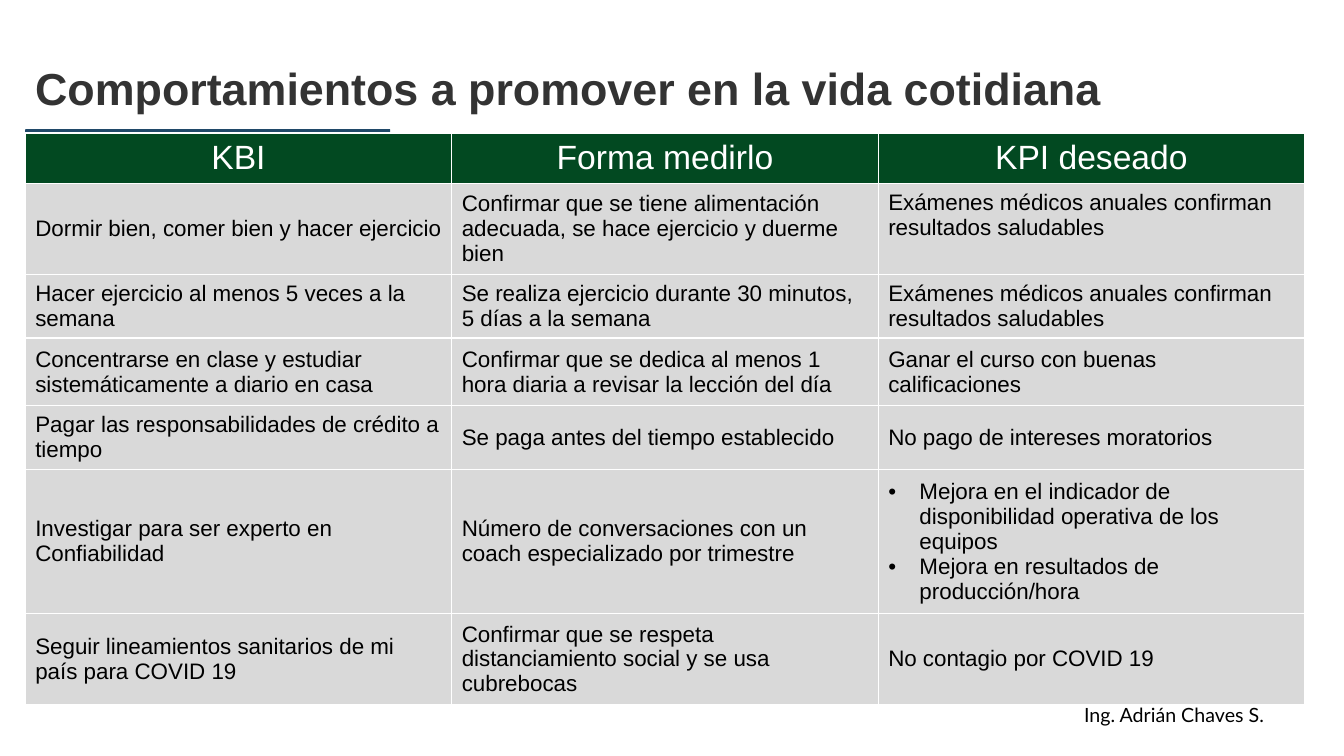
from lxml import etree
from pptx import Presentation
from pptx.dml.color import RGBColor
from pptx.enum.shapes import MSO_SHAPE
from pptx.enum.text import MSO_ANCHOR, PP_ALIGN
from pptx.oxml.ns import qn
from pptx.util import Inches, Pt

TITLE = "Comportamientos a promover en la vida cotidiana"
AUTHOR = "Ing. Adrián Chaves S."
HEADINGS = ["KBI", "Forma medirlo", "KPI deseado"]
# Row height in inches, then the three cells; a list makes a bulleted cell.
BEHAVIOURS = [
    (0.88, "Dormir bien, comer bien y hacer ejercicio",
     "Confirmar que se tiene alimentación adecuada, se hace ejercicio y duerme bien",
     "Exámenes médicos anuales confirman resultados saludables"),
    (0.62, "Hacer ejercicio al menos 5 veces a la semana",
     "Se realiza ejercicio durante 30 minutos, 5 días a la semana",
     "Exámenes médicos anuales confirman resultados saludables"),
    (0.67, "Concentrarse en clase y estudiar sistemáticamente a diario en casa",
     "Confirmar que se dedica al menos 1 hora diaria a revisar la lección del día",
     "Ganar el curso con buenas calificaciones"),
    (0.62, "Pagar las responsabilidades de crédito a tiempo",
     "Se paga antes del tiempo establecido",
     "No pago de intereses moratorios"),
    (1.41, "Investigar para ser experto en Confiabilidad",
     "Número de conversaciones con un coach especializado por trimestre",
     ["Mejora en el indicador de disponibilidad operativa de los equipos",
      "Mejora en resultados de producción/hora"]),
    (0.88, "Seguir lineamientos sanitarios de mi país para COVID 19",
     "Confirmar que se respeta distanciamiento social y se usa cubrebocas",
     "No contagio por COVID 19"),
]
HEADER_HEIGHT = 0.49
COLUMN_WIDTH = 4.23
LEFT = 0.25

WHITE = RGBColor(0xFF, 0xFF, 0xFF)
BLACK = RGBColor(0x00, 0x00, 0x00)
CHARCOAL = RGBColor(0x33, 0x33, 0x33)
NAVY = RGBColor(0x20, 0x49, 0x69)
GREEN = RGBColor(0x02, 0x49, 0x21)
GREY = RGBColor(0xD9, 0xD9, 0xD9)

MIDDLE, TOP, BOTTOM = MSO_ANCHOR.MIDDLE, MSO_ANCHOR.TOP, MSO_ANCHOR.BOTTOM
CENTER, START = PP_ALIGN.CENTER, PP_ALIGN.LEFT


def style(para, size, color, align=START, name="Arial", bold=False):
    para.alignment = align
    para.font.name = name
    para.font.size = Pt(size)
    para.font.bold = bold
    para.font.color.rgb = color


def add_text(page, area, text, anchor):
    box = page.shapes.add_textbox(*map(Inches, area))
    frame = box.text_frame
    frame.word_wrap = True
    frame.vertical_anchor = anchor
    frame.text = text
    return frame.paragraphs[0]


def add_bullet(para):
    properties = para._p.get_or_add_pPr()
    properties.set("marL", str(Inches(0.31)))
    properties.set("indent", str(-Inches(0.31)))
    etree.SubElement(properties, qn("a:buFont")).set("typeface", "Arial")
    etree.SubElement(properties, qn("a:buChar")).set("char", "•")


def add_borders(cell):
    """Draw a thin white line on all four sides; lines precede the fill."""
    properties = cell._tc.get_or_add_tcPr()
    for index, side in enumerate(("a:lnL", "a:lnR", "a:lnT", "a:lnB")):
        line = etree.Element(qn(side), w=str(Pt(1)))
        fill = etree.SubElement(line, qn("a:solidFill"))
        etree.SubElement(fill, qn("a:srgbClr")).set("val", str(WHITE))
        properties.insert(index, line)


def fill_cell(cell, content, background, size, color, align):
    bulleted = isinstance(content, list)
    cell.text = "\n".join(content) if bulleted else content
    cell.vertical_anchor = MIDDLE
    cell.fill.solid()
    cell.fill.fore_color.rgb = background
    add_borders(cell)
    for para in cell.text_frame.paragraphs:
        if bulleted:
            add_bullet(para)
        style(para, size, color, align)


def add_behaviour_table(page):
    heights = [HEADER_HEIGHT] + [row[0] for row in BEHAVIOURS]
    rows = [HEADINGS] + [row[1:] for row in BEHAVIOURS]
    columns = len(HEADINGS)
    table = page.shapes.add_table(
        len(rows), columns, Inches(LEFT), Inches(1.32),
        Inches(COLUMN_WIDTH * columns), Inches(sum(heights))).table
    table.horz_banding = False
    for column in table.columns:
        column.width = Inches(COLUMN_WIDTH)
    for r, (height, contents) in enumerate(zip(heights, rows)):
        table.rows[r].height = Inches(height)
        look = (GREY, 16, BLACK, START) if r else (GREEN, 24, WHITE, CENTER)
        for c, content in enumerate(contents):
            fill_cell(table.cell(r, c), content, *look)
    first_result = table.cell(1, 2)
    first_result.vertical_anchor = TOP
    first_result.margin_top = Inches(0.07)


def main():
    deck = Presentation()
    deck.slide_width, deck.slide_height = Inches(13.33), Inches(7.5)
    page = deck.slides.add_slide(deck.slide_layouts[6])

    author = add_text(page, (10.09, 6.92, 3.11, 0.34), AUTHOR, TOP)
    style(author, 14, BLACK, CENTER, "Lato")

    rule = page.shapes.add_shape(MSO_SHAPE.ROUNDED_RECTANGLE, Inches(LEFT),
                                 Inches(1.28), Inches(3.62), Inches(0.05))
    rule.shadow.inherit = False
    rule.fill.solid()
    rule.fill.fore_color.rgb = NAVY
    rule.line.fill.background()

    title = add_text(page, (LEFT, 0.25, 11.01, 0.94), TITLE, BOTTOM)
    title.line_spacing = 0.9
    style(title, 32, CHARCOAL, bold=True)

    add_behaviour_table(page)
    deck.save("out.pptx")


if __name__ == "__main__":
    main()
